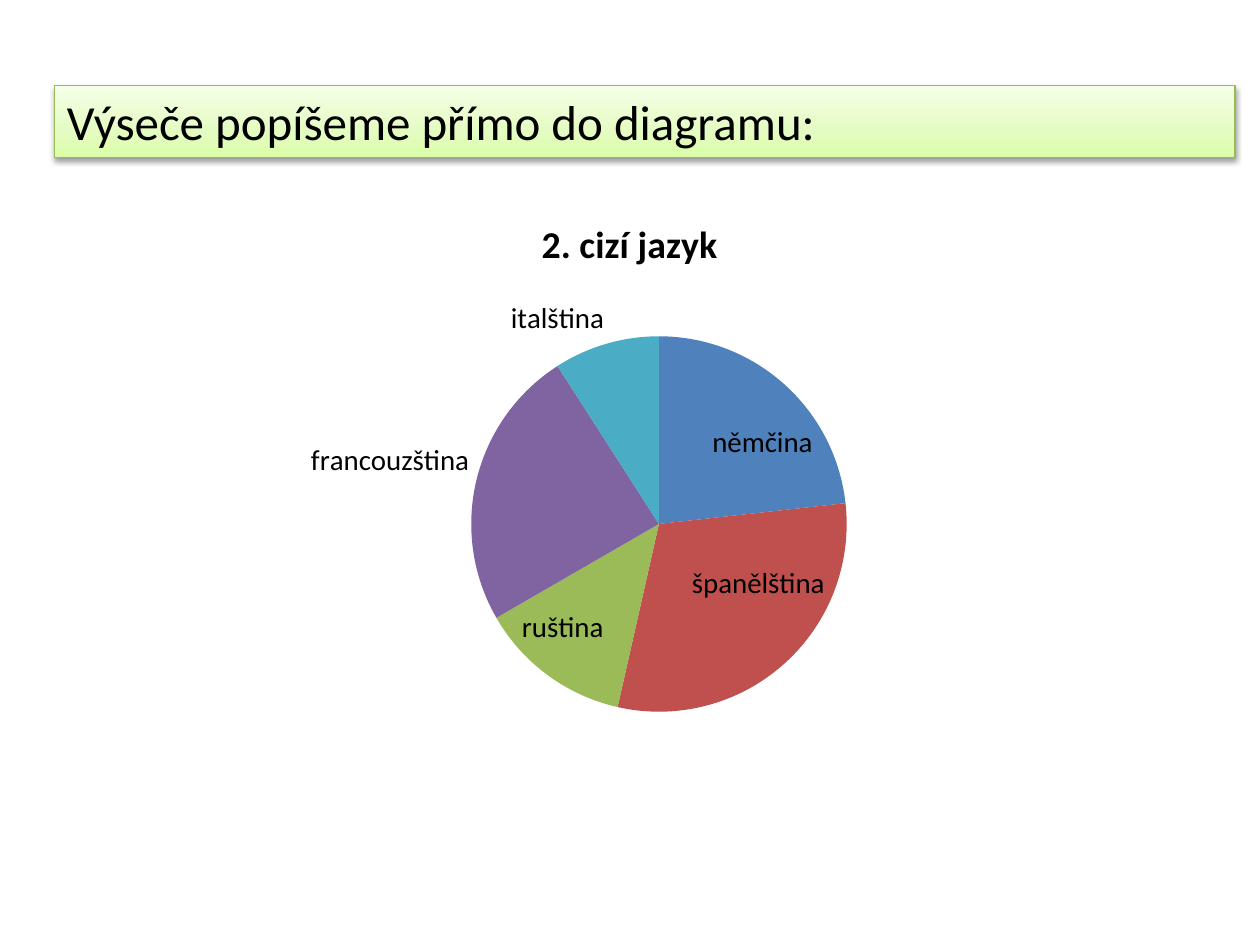
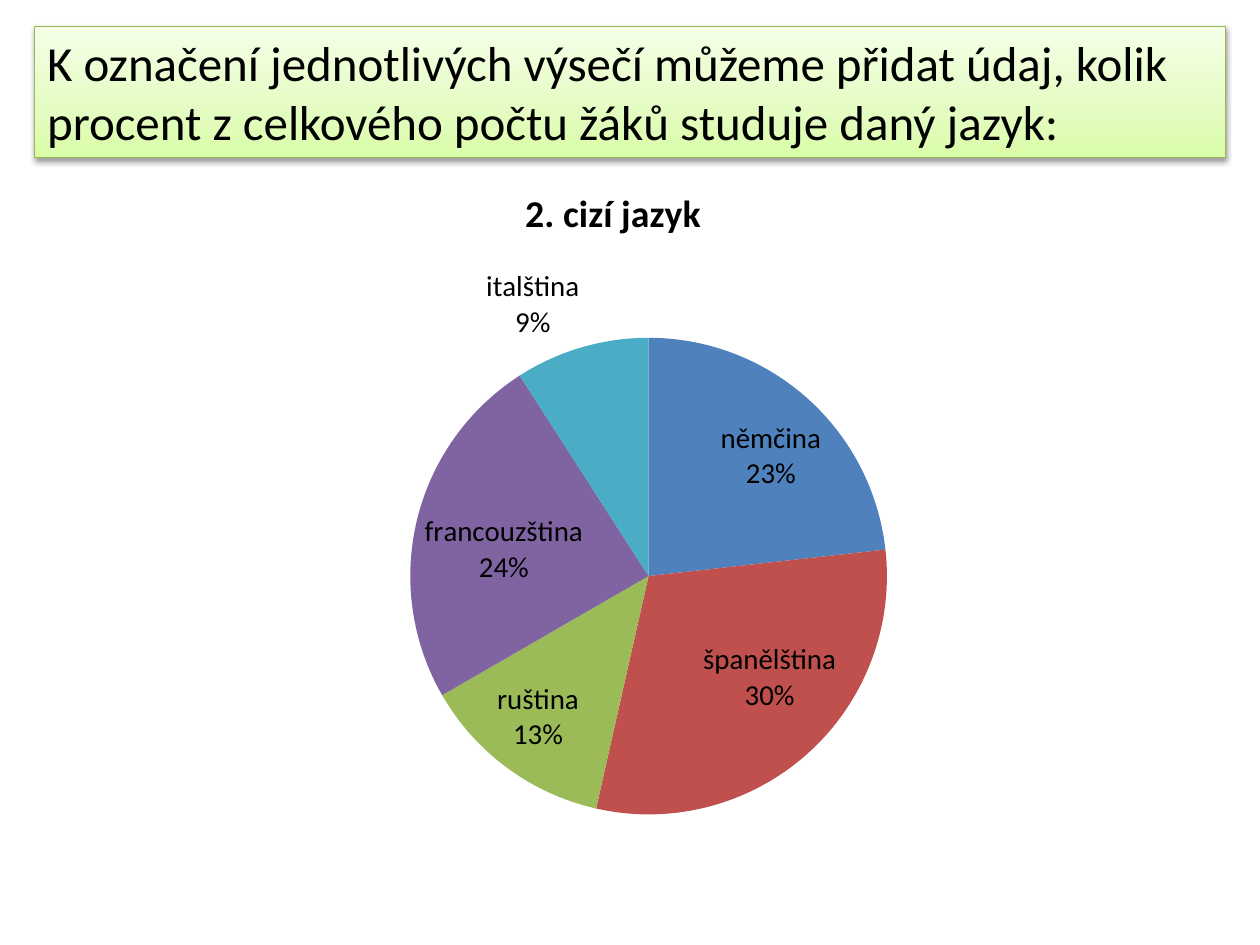
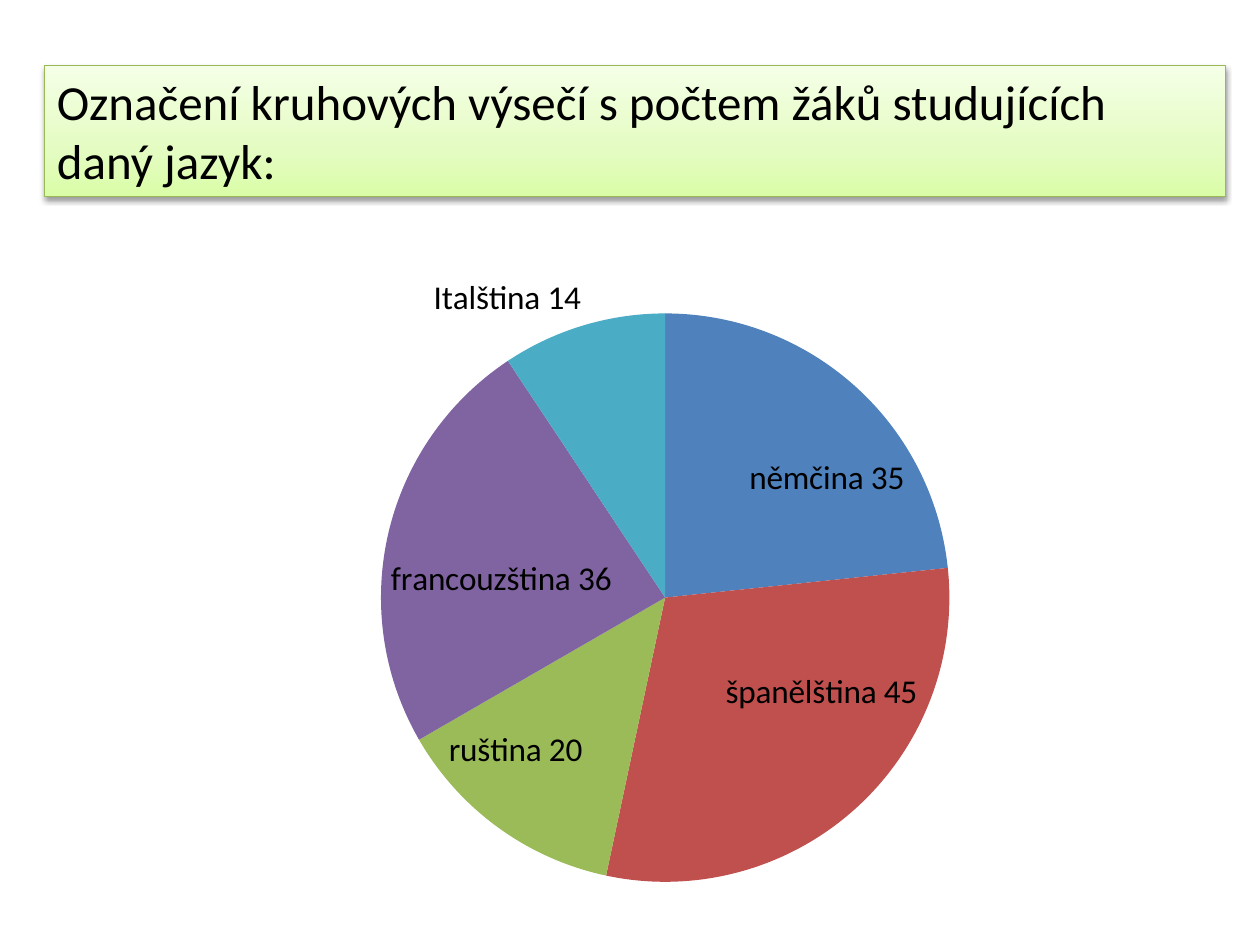
from lxml import etree
from pptx import Presentation
from pptx.chart.data import CategoryChartData
from pptx.dml.color import RGBColor
from pptx.enum.chart import XL_CHART_TYPE, XL_LABEL_POSITION
from pptx.enum.shapes import MSO_SHAPE
from pptx.enum.text import MSO_ANCHOR, PP_ALIGN
from pptx.oxml import parse_xml
from pptx.oxml.ns import nsdecls, qn
from pptx.util import Cm, Pt

FONT = "Calibri"
TEXT = "000000"
BANNER_LINE = "98B955"
BANNER_STOPS = [(0, "DAFDA7"), (35, "E4FCC2"), (100, "F5FFE7")]
SLICE_COLORS = ["4F81BD", "C0504D", "9BBB59", "8064A2", "4BACC6"]
LANGUAGES = ["němčina", "španělština", "ruština", "francouzština", "italština"]
SUBJECT = "2. cizí jazyk"
SHARES = [23, 30, 13, 24, 9]
PUPILS = [35, 45, 20, 36, 14]


def rgb(value):
    return RGBColor.from_string(value)


def style_font(font, size, bold=False):
    font.name, font.size, font.bold = FONT, Pt(size), bold
    font.color.rgb = rgb(TEXT)


def add_banner(s, box, lines):
    sp = s.shapes.add_shape(MSO_SHAPE.RECTANGLE, *map(Cm, box))
    sp.line.color.rgb = rgb(BANNER_LINE)
    sp.line.width = Pt(0.75)
    stops = "".join(f'<a:gs pos="{pos * 1000}"><a:srgbClr val="{color}"/></a:gs>'
                    for pos, color in BANNER_STOPS)
    props = sp._element.spPr
    props.find(qn("a:prstGeom")).addnext(parse_xml(
        f'<a:gradFill {nsdecls("a")} rotWithShape="1"><a:gsLst>{stops}</a:gsLst>'
        '<a:lin ang="16200000" scaled="1"/></a:gradFill>'))
    props.append(parse_xml(
        f'<a:effectLst {nsdecls("a")}><a:outerShdw blurRad="40000" dist="20000" '
        'dir="5400000" rotWithShape="0"><a:srgbClr val="000000">'
        '<a:alpha val="38000"/></a:srgbClr></a:outerShdw></a:effectLst>'))
    tf = sp.text_frame
    tf.word_wrap = True
    tf.vertical_anchor = MSO_ANCHOR.TOP
    for i, line in enumerate(lines):
        p = tf.add_paragraph() if i else tf.paragraphs[0]
        p.text = line
        p.alignment = PP_ALIGN.LEFT
        style_font(p.font, 28)


def place_pie(chart, box, pie):
    """Fix the plot at pie (left, top, diameter), measured from the chart's corner."""
    left, top, diameter = pie
    width, height = box[2:]
    plot_area = chart._chartSpace.chart.plotArea
    for old in plot_area.findall(qn("c:layout")):
        plot_area.remove(old)
    parts = {"x": left / width, "y": top / height,
             "w": diameter / width, "h": diameter / height}
    modes = "".join(f'<c:{k}Mode val="edge"/>' for k in "xy")
    sizes = "".join(f'<c:{k} val="{v:.4f}"/>' for k, v in parts.items())
    plot_area.insert(0, parse_xml(
        f'<c:layout {nsdecls("c")}><c:manualLayout><c:layoutTarget val="inner"/>'
        f'{modes}{sizes}</c:manualLayout></c:layout>'))


def show_parts(labels, value, percent):
    """Show the category, and the value or the percentage (on its own line) if asked."""
    flags = {"showVal": value, "showCatName": True, "showPercent": percent}
    for name, shown in flags.items():
        labels.find(qn(f"c:{name}")).set("val", str(int(shown)))
    separator = etree.Element(qn("c:separator"))
    separator.text = "\n" if percent else " "
    labels.find(qn("c:showBubbleSize")).addnext(separator)


def add_pie(s, box, pie, name, values, label_size, texts,
            title=None, value=False, percent=False):
    """texts maps the number of a slice to the wording of its label."""
    data = CategoryChartData()
    data.categories = LANGUAGES
    data.add_series(name, values)
    chart = s.shapes.add_chart(XL_CHART_TYPE.PIE, *map(Cm, box), data).chart
    style_font(chart.font, 18)
    chart.has_legend = False
    chart.has_title = bool(title)
    if title:
        p = chart.chart_title.text_frame.paragraphs[0]
        p.text = title
        style_font(p.font, 21.6, bold=True)
    place_pie(chart, box, pie)

    chart.plots[0].vary_by_categories = True
    series = chart.plots[0].series[0]
    for i, color in enumerate(SLICE_COLORS):
        fill = series.points[i].format.fill
        fill.solid()
        fill.fore_color.rgb = rgb(color)

    labels = series.data_labels
    style_font(labels.font, label_size)
    labels.position = XL_LABEL_POSITION.BEST_FIT
    for i, text in texts.items():
        label = series.points[i].data_label
        p = label.text_frame.paragraphs[0]
        p.text = text
        style_font(p.font, label_size)
        label.position = XL_LABEL_POSITION.BEST_FIT
    for element in (labels._element, *labels._element.findall(qn("c:dLbl"))):
        show_parts(element, value, percent)


def names_slide(s):
    french = LANGUAGES.index("francouzština")
    add_pie(s, (4.23, 3.89, 16.93, 11.29), (5.27, 2.89, 7.57),
            SUBJECT, SHARES, 16.5, {french: LANGUAGES[french]}, title=SUBJECT)
    add_banner(s, (1.1, 1.73, 23.8, 1.45), ["Výseče popíšeme přímo do diagramu:"])


def percent_slide(s):
    add_pie(s, (2.13, 3.18, 20.47, 14.66), (6.14, 3.63, 9.61),
            SUBJECT, SHARES, 16.5, {}, title=SUBJECT, percent=True)
    add_banner(s, (0.7, 0.53, 24, 2.64),
               ["K označení jednotlivých výsečí můžeme přidat údaj, kolik",
                "procent z celkového počtu žáků studuje daný jazyk:"])


def pupils_slide(s):
    names = LANGUAGES[:-1] + [LANGUAGES[-1].capitalize()]
    texts = {i: f"{name} {count}" for i, (name, count) in enumerate(zip(names, PUPILS))}
    add_pie(s, (1.3, 5.13, 22.81, 13.41), (6.38, 1.19, 11.46),
            "Series 1", PUPILS, 19, texts, value=True)
    add_banner(s, (0.9, 1.32, 23.8, 2.64),
               ["Označení kruhových výsečí s počtem žáků studujících", "daný jazyk:"])


def main():
    prs = Presentation()
    prs.slide_width, prs.slide_height = Cm(25.4), Cm(19.05)
    for build in (names_slide, percent_slide, pupils_slide):
        build(prs.slides.add_slide(prs.slide_layouts[6]))
    prs.save("out.pptx")


if __name__ == "__main__":
    main()
